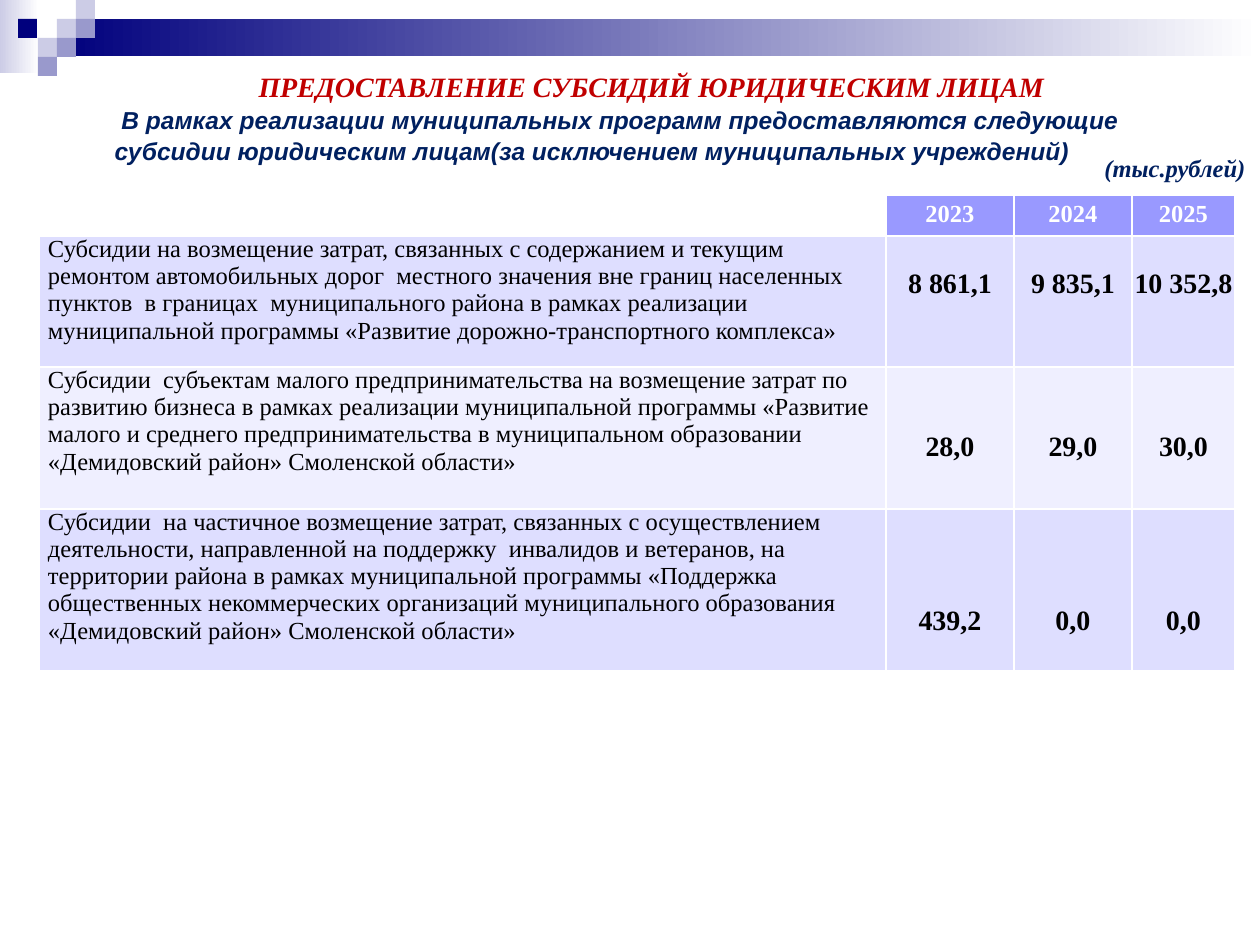
from pptx import Presentation
from pptx.dml.color import RGBColor
from pptx.enum.shapes import MSO_SHAPE as SHAPE
from pptx.enum.text import MSO_ANCHOR as ANCHOR, MSO_AUTO_SIZE as AUTO, PP_ALIGN as ALIGN
from pptx.util import Emu, Pt

PX_PER_INCH = 126
SERIF, SANS = "Times New Roman", "Arial"
NAVY, LILAC, VIOLET, WHITE = "00007D", "CCCCE6", "9999CC", "FFFFFF"
HEADER, BAND_DARK, BAND_LIGHT = "9999FF", "DEDEFF", "EFEFFF"
RED, INK, BLACK = "C00000", "002060", "000000"


def px(n):
    return Emu(round(n * 914400 / PX_PER_INCH))


def rgb(color):
    return RGBColor.from_string(color)


class SlideBuilder:
    def __init__(self, prs):
        self.s = prs.slides.add_slide(prs.slide_layouts[5])

    def font(self, p, size, color, name=SERIF, bold=True, italic=False):
        f = p.font
        f.name, f.size, f.bold, f.italic = name, Pt(size), bold, italic
        f.color.rgb = rgb(color)

    def rect(self, x, y, w, h, *colors):
        """One colour gives a solid fill, two a left-to-right gradient."""
        sp = self.s.shapes.add_shape(SHAPE.RECTANGLE, px(x), px(y), px(w), px(h))
        sp.shadow.inherit = False
        sp.line.fill.background()
        if len(colors) == 1:
            sp.fill.solid()
            sp.fill.fore_color.rgb = rgb(colors[0])
            return
        sp.fill.gradient()
        sp.fill.gradient_angle = 0
        for stop, color in zip(sp.fill.gradient_stops, colors):
            stop.color.rgb = rgb(color)

    def title(self, x, y, w, h, heading, lines):
        sp = self.s.shapes.title
        sp.left, sp.top, sp.width, sp.height = px(x), px(y), px(w), px(h)
        tf = sp.text_frame
        tf.word_wrap, tf.auto_size = True, AUTO.NONE
        tf.vertical_anchor = ANCHOR.TOP
        tf.margin_top = px(11)
        tf.text = "\n".join([heading, *lines])
        for i, p in enumerate(tf.paragraphs):
            p.alignment = ALIGN.LEFT if i else ALIGN.CENTER
            p.space_before = Pt(1 if i else 0)
            pPr = p._p.get_or_add_pPr()
            pPr.set("marL", "0")
            pPr.set("indent", str(px(63)))
            if i:
                self.font(p, 14, INK, SANS, italic=True)
            else:
                self.font(p, 16, RED, italic=True)

    def label(self, x, y, w, h, text):
        tf = self.s.shapes.add_textbox(px(x), px(y), px(w), px(h)).text_frame
        tf.word_wrap = False
        p = tf.paragraphs[0]
        p.text = text
        self.font(p, 14, INK, italic=True)

    def cell(self, cell, text, fill, margins, size=14, color=BLACK, bold=True, align=ALIGN.CENTER):
        """Margins are (sides, top, bottom) in px."""
        sides, top, bottom = margins
        cell.margin_left = cell.margin_right = px(sides)
        cell.margin_top, cell.margin_bottom = px(top), px(bottom)
        cell.fill.solid()
        cell.fill.fore_color.rgb = rgb(fill)
        p = cell.text_frame.paragraphs[0]
        p.text, p.alignment = text, align
        self.font(p, size, color, bold=bold)

    def table(self, x, y, col_widths, row_heights, years, rows):
        tbl = self.s.shapes.add_table(
            len(row_heights), len(col_widths), px(x), px(y),
            px(sum(col_widths)), px(sum(row_heights))).table
        for col, w in zip(tbl.columns, col_widths):
            col.width = px(w)
        for row, h in zip(tbl.rows, row_heights):
            row.height = px(h)
        corner = tbl.cell(0, 0)
        corner.fill.background()
        corner.margin_top = corner.margin_bottom = 0
        for c, year in enumerate(years, 1):
            self.cell(tbl.cell(0, c), year, HEADER, (13, 6, 6), color=WHITE)
        for r, (name, *values) in enumerate(rows, 1):
            fill = BAND_DARK if r % 2 else BAND_LIGHT
            self.cell(tbl.cell(r, 0), name, fill, (9, 0, 0), bold=False, align=ALIGN.LEFT)
            for c, value in enumerate(values, 1):
                self.cell(tbl.cell(r, c), value, fill, (1, 1 + 32 * r, 0), size=16)


SUBSIDIES = [
    ("Субсидии на возмещение затрат, связанных с содержанием и текущим ремонтом "
     "автомобильных дорог  местного значения вне границ населенных пунктов  в границах  "
     "муниципального района в рамках реализации муниципальной программы "
     "«Развитие дорожно-транспортного комплекса»",
     "8 861,1", "9 835,1", "10 352,8"),
    ("Субсидии  субъектам малого предпринимательства на возмещение затрат по развитию "
     "бизнеса в рамках реализации муниципальной программы «Развитие малого и среднего "
     "предпринимательства в муниципальном образовании «Демидовский район» "
     "Смоленской области»",
     "28,0", "29,0", "30,0"),
    ("Субсидии  на частичное возмещение затрат, связанных с осуществлением деятельности, "
     "направленной на поддержку  инвалидов и ветеранов, на территории района в рамках "
     "муниципальной программы «Поддержка общественных некоммерческих организаций "
     "муниципального образования «Демидовский район» Смоленской области»",
     "439,2", "0,0", "0,0"),
]

BANNER_SQUARES = [
    (57, 19, LILAC), (76, 0, LILAC), (76, 19, VIOLET), (38, 38, LILAC),
    (18, 19, NAVY), (57, 38, VIOLET), (38, 57, VIOLET),
]


def main():
    prs = Presentation()
    prs.slide_width, prs.slide_height = px(1260), px(945)
    b = SlideBuilder(prs)
    b.rect(0, 0, 39, 73, LILAC, WHITE)
    b.rect(57, 19, 1203, 37, NAVY, WHITE)
    for x, y, color in BANNER_SQUARES:
        b.rect(x, y, 19, 19, color)
    b.table(39, 195, [847, 128, 118, 103], [41, 131, 142, 162],
            ["2023", "2024", "2025"], SUBSIDIES)
    b.title(39, 59, 1162, 115, "ПРЕДОСТАВЛЕНИЕ СУБСИДИЙ ЮРИДИЧЕСКИМ ЛИЦАМ", [
        " В рамках реализации муниципальных программ предоставляются следующие",
        "субсидии юридическим лицам(за исключением муниципальных учреждений)"])
    b.label(1092, 147, 168, 43, "(тыс.рублей)")
    prs.save("out.pptx")


if __name__ == "__main__":
    main()
